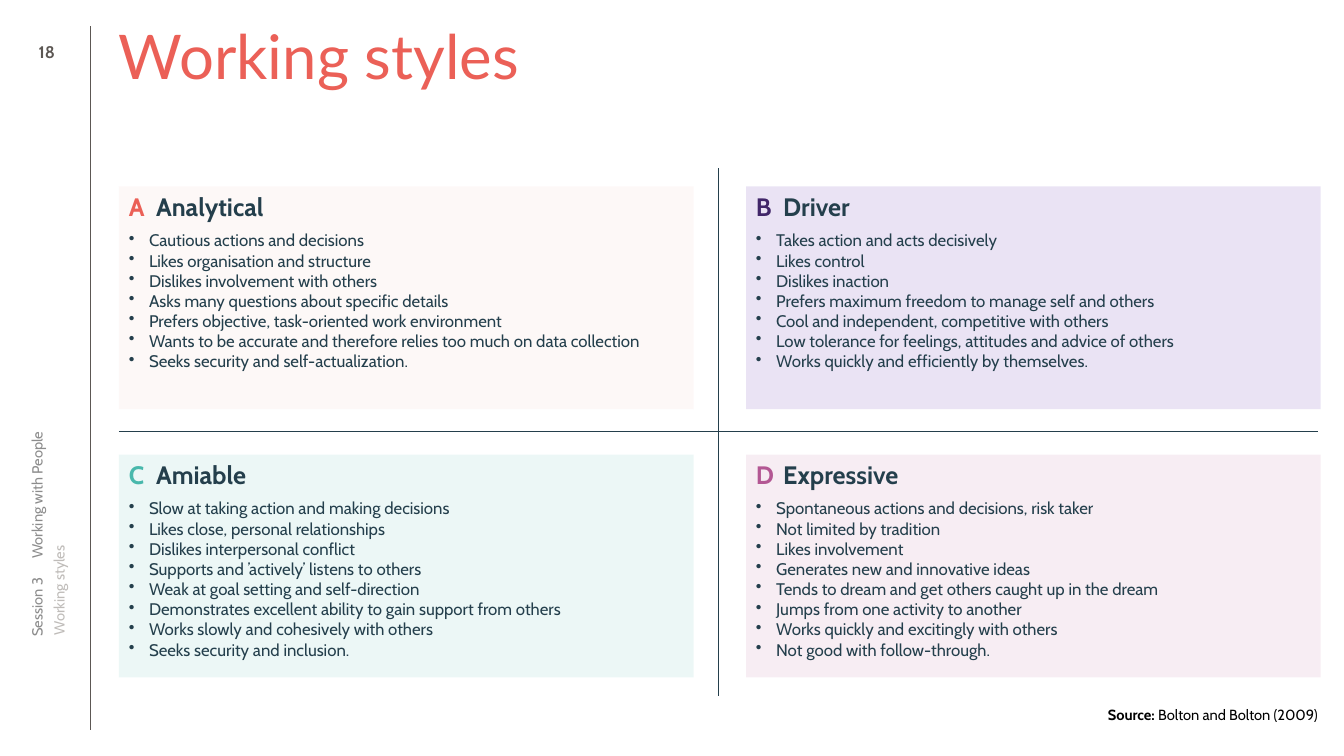
from dataclasses import dataclass

from lxml.etree import SubElement
from pptx import Presentation
from pptx.dml.color import RGBColor
from pptx.enum.shapes import MSO_CONNECTOR, MSO_SHAPE
from pptx.enum.text import MSO_ANCHOR, MSO_AUTO_SIZE, PP_ALIGN
from pptx.oxml.ns import qn
from pptx.util import Inches, Pt

# Content
TITLE = "Working styles"
SESSION = "Session 3\tWorking with People"
PAGE = "18"
SOURCE = ("Source:", " Bolton and Bolton (2009)")
# letter, name, letter colour, panel fill, points; row by row
STYLES = [
    ("A", "Analytical", "EB6057", "FCF2F0", [
        "Cautious actions and decisions",
        "Likes organisation and structure",
        "Dislikes involvement with others",
        "Asks many questions about specific details",
        "Prefers objective, task-oriented work environment",
        "Wants to be accurate and therefore relies too much on data collection",
        "Seeks security and self-actualization."]),
    ("B", "Driver", "412669", "D7C9EB", [
        "Takes action and acts decisively",
        "Likes control",
        "Dislikes inaction",
        "Prefers maximum freedom to manage self and others",
        "Cool and independent, competitive with others",
        "Low tolerance for feelings, attitudes and advice of others",
        "Works quickly and efficiently by themselves."]),
    ("C", "Amiable", "49B8AC", "DBF1EE", [
        "Slow at taking action and making decisions",
        "Likes close, personal relationships",
        "Dislikes interpersonal conflict",
        "Supports and ’actively’ listens to others",
        "Weak at goal setting and self-direction",
        "Demonstrates excellent ability to gain support from others",
        "Works slowly and cohesively with others",
        "Seeks security and inclusion."]),
    ("D", "Expressive", "B35793", "F0DDE9", [
        "Spontaneous actions and decisions, risk taker",
        "Not limited by tradition",
        "Likes involvement",
        "Generates new and innovative ideas",
        "Tends to dream and get others caught up in the dream",
        "Jumps from one activity to another",
        "Works quickly and excitingly with others",
        "Not good with follow-through."]),
]


@dataclass(frozen=True)
class Theme:
    head_font: str = "Lato"
    font: str = "Cabin"
    accent: str = "EB6057"
    ink: str = "243F4C"
    rule: str = "5C5753"
    session: str = "8C8C8C"
    section: str = "BFBCB9"
    black: str = "000000"
    title: float = 44
    heading: float = 18
    body: float = 12
    small: float = 10.5


T = Theme()

# Grid, in inches
WIDTH, HEIGHT = 13.33, 7.5
LEFT, TOP, CONTENT_W = 1.18, 0.26, 11.89
PANEL_W, PANEL_H = 5.7, 2.21
GAP_X, GAP_Y, PANEL_TOP = 0.52, 0.45, 1.85
MID_X = LEFT + CONTENT_W / 2
MID_Y = PANEL_TOP + PANEL_H + GAP_Y / 2
AXIS_HALF = 2.62
RULE_X = 0.89

prs = Presentation()
prs.slide_width, prs.slide_height = Inches(WIDTH), Inches(HEIGHT)
s = prs.slides.add_slide(prs.slide_layouts[6])


def add_run(p, text, size, color, bold=False, font=T.font):
    r = p.add_run()
    r.text = text
    r.font.size, r.font.name, r.font.bold = Pt(size), font, bold
    r.font.color.rgb = RGBColor.from_string(color)


def add_tab(p, inches):
    tabs = SubElement(p._p.get_or_add_pPr(), qn("a:tabLst"))
    SubElement(tabs, qn("a:tab"), pos=str(Inches(inches)), algn="l")


def add_bullet(p, indent):
    pPr = p._p.get_or_add_pPr()
    pPr.set("marL", str(Inches(indent)))
    pPr.set("indent", str(-Inches(indent)))
    SubElement(pPr, qn("a:buChar"), char="•")


def add_box(x, y, w, h, anchor=MSO_ANCHOR.TOP, inset=0, turn=0):
    sp = s.shapes.add_textbox(*map(Inches, (x, y, w, h)))
    sp.rotation = turn
    tf = sp.text_frame
    tf.word_wrap, tf.vertical_anchor = True, anchor
    tf.margin_left = tf.margin_right = Inches(inset)
    tf.margin_top = tf.margin_bottom = Inches(inset / 2)
    return tf


def add_line(x1, y1, x2, y2, color, width):
    line = s.shapes.add_connector(MSO_CONNECTOR.STRAIGHT, *map(Inches, (x1, y1, x2, y2)))
    line.line.color.rgb = RGBColor.from_string(color)
    line.line.width = Pt(width)
    SubElement(line._element.spPr, qn("a:effectLst"))


def add_panel(x, y, letter, name, color, fill, points):
    sp = s.shapes.add_shape(MSO_SHAPE.RECTANGLE, *map(Inches, (x, y, PANEL_W, PANEL_H)))
    sp.shadow.inherit = False
    sp.line.fill.background()
    sp.fill.solid()
    sp.fill.fore_color.rgb = RGBColor.from_string(fill)
    SubElement(sp.fill._xPr.find(".//" + qn("a:srgbClr")), qn("a:alpha"), val="50000")
    tf = sp.text_frame
    tf.word_wrap, tf.vertical_anchor = True, MSO_ANCHOR.TOP
    p = tf.paragraphs[0]
    p.alignment, p.space_after = PP_ALIGN.LEFT, Pt(6)
    add_tab(p, 0.27)
    add_run(p, letter + "\t", T.heading, color, True)
    add_run(p, name, T.heading, T.ink, True)
    for point in points:
        p = tf.add_paragraph()
        p.alignment = PP_ALIGN.LEFT
        add_bullet(p, 0.2)
        add_run(p, point, T.body, T.ink)


# Side margin: rule, page number, turned session and section names
add_line(RULE_X, HEIGHT - TOP, RULE_X, TOP, T.rule, 0.25)
p = add_box(-1.96, 3.89, 4.65, 0.2, MSO_ANCHOR.MIDDLE, turn=270).paragraphs[0]
add_tab(p, 0.77)
add_run(p, SESSION, T.small, T.session)
p = add_box(-1.73, 3.91, 4.64, 0.15, turn=270).paragraphs[0]
p.line_spacing = 0.9
add_run(p, TITLE, T.small, T.section)
p = add_box(TOP, TOP, 0.41, 0.51, MSO_ANCHOR.MIDDLE).paragraphs[0]
p.alignment = PP_ALIGN.CENTER
add_run(p, PAGE, T.body, T.rule, True)

# Title
p = add_box(LEFT, TOP, CONTENT_W, 1.25).paragraphs[0]
p.line_spacing = 0.9
add_run(p, TITLE, T.title, T.accent, font=T.head_font)

# Source
tf = add_box(LEFT, 6.95, CONTENT_W + 0.1, 0.28, inset=0.1)
tf.auto_size = MSO_AUTO_SIZE.SHAPE_TO_FIT_TEXT
p = tf.paragraphs[0]
p.alignment = PP_ALIGN.RIGHT
for text, bold in zip(SOURCE, (True, False)):
    add_run(p, text, T.small, T.black, bold)

# Axes and the four panels
add_line(LEFT, MID_Y, LEFT + CONTENT_W, MID_Y, T.ink, 0.75)
add_line(MID_X, MID_Y + AXIS_HALF, MID_X, MID_Y - AXIS_HALF, T.ink, 0.75)
for i, style in enumerate(STYLES):
    row, col = divmod(i, 2)
    add_panel(LEFT + col * (PANEL_W + GAP_X), PANEL_TOP + row * (PANEL_H + GAP_Y), *style)

prs.save("out.pptx")
